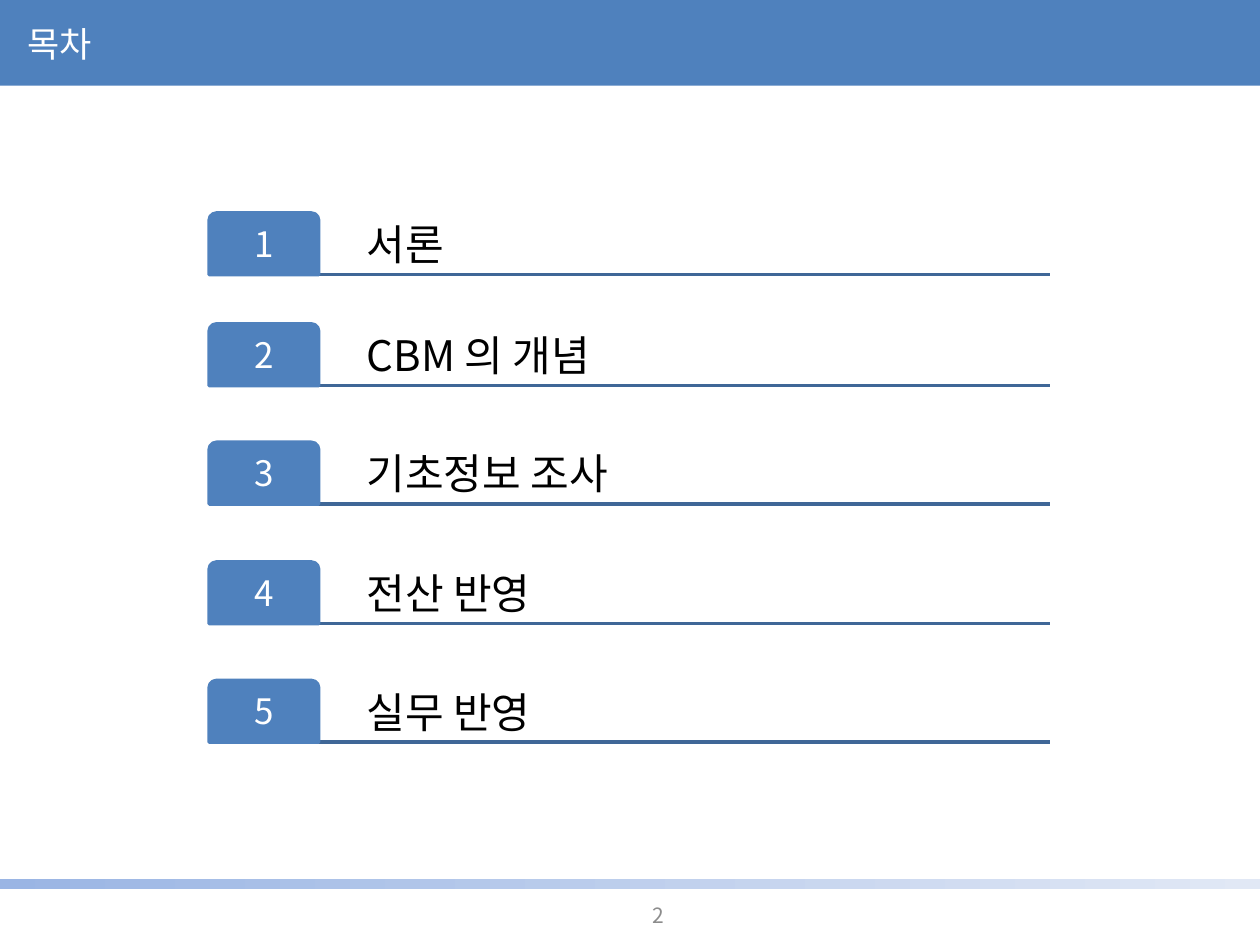
from lxml import etree
from pptx import Presentation
from pptx.dml.color import RGBColor
from pptx.enum import shapes, text
from pptx.oxml import ns
from pptx.util import Inches, Pt

FONT = "Noto Sans CJK KR"
BLUE = "4F81BD"


def tint(code):
    return RGBColor.from_string(code)


def write(shape, words, size, code, align, anchor, pads):
    frame = shape.text_frame
    frame.word_wrap = True
    frame.vertical_anchor = anchor
    frame.margin_left, frame.margin_top, frame.margin_right, frame.margin_bottom = map(Inches, pads)
    para = frame.paragraphs[0]
    para.alignment = align
    run = para.add_run()
    run.text = words
    run.font.size = Pt(size)
    run.font.name = FONT
    run.font.color.rgb = tint(code)
    etree.SubElement(run.font._element, ns.qn("a:ea"), typeface=FONT)
    return para


deck = Presentation()
deck.slide_width, deck.slide_height = Inches(10), Inches(7.5)
slide = deck.slides.add_slide(deck.slide_layouts[6])
draw = slide.shapes
left, center = text.PP_ALIGN.LEFT, text.PP_ALIGN.CENTER
top, middle, bottom = text.MSO_ANCHOR.TOP, text.MSO_ANCHOR.MIDDLE, text.MSO_ANCHOR.BOTTOM
normal = (0.1, 0.05, 0.1, 0.05)

band = draw.add_shape(shapes.MSO_SHAPE.RECTANGLE, 0, Inches(-0.03), Inches(10), Inches(0.71))
band.shadow.inherit = False
band.fill.solid()
band.fill.fore_color.rgb = tint(BLUE)
band.line.fill.background()

strip = draw.add_shape(shapes.MSO_SHAPE.RECTANGLE, 0, Inches(6.98), Inches(10), Inches(0.08))
strip.shadow.inherit = False
strip.fill.gradient()
strip.fill.gradient_angle = 0
for stop, code in zip(strip.fill.gradient_stops, ("9AB5E4", "E1E8F5")):
    stop.color.rgb = tint(code)
strip.fill.gradient_stops[0].position = 0
strip.fill.gradient_stops[1].position = 1
strip.line.fill.background()

page = draw.add_textbox(Inches(4.06), Inches(7.06), Inches(2.33), Inches(0.4))
write(page, "2", 12, "8C8C8C", center, middle, normal)

title = draw.add_textbox(Inches(0.12), Inches(0.13), Inches(8.35), Inches(0.44))
write(title, "목차", 20, "FFFFFF", left, top, normal)
title.text_frame.auto_size = text.MSO_AUTO_SIZE.SHAPE_TO_FIT_TEXT

topics = ["서론", "CBM 의 개념", "기초정보 조사", "전산 반영", "실무 반영"]
tops = [1.69, 2.57, 3.51, 4.46, 5.4]
for num, (topic, y) in enumerate(zip(topics, tops), 1):
    base = Inches(y + 0.49)
    rule = draw.add_connector(shapes.MSO_CONNECTOR.STRAIGHT, Inches(1.66), base, Inches(8.33), base)
    rule.line.color.rgb = tint("3F6797")
    rule.line.width = Pt(2)
    etree.SubElement(rule._element.spPr, ns.qn("a:effectLst"))

    label = draw.add_textbox(Inches(2.87), Inches(y), Inches(5.46), Inches(0.49))
    para = write(label, topic, 24, "000000", left, bottom, (0.04,) * 4)
    para.line_spacing = 0.9

    tab = draw.add_shape(shapes.MSO_SHAPE.ROUND_2_SAME_RECTANGLE,
                         Inches(1.66), Inches(y), Inches(0.87), Inches(0.49))
    tab.adjustments[0] = 0.12
    tab.shadow.inherit = False
    tab.fill.solid()
    tab.fill.fore_color.rgb = tint(BLUE)
    tab.line.color.rgb = tint(BLUE)
    tab.line.width = Pt(2)
    para = write(tab, str(num), 20, "FFFFFF", center, middle, (0.06, 0.06, 0.06, 0.04))
    para.line_spacing = 0.9

deck.save("out.pptx")
